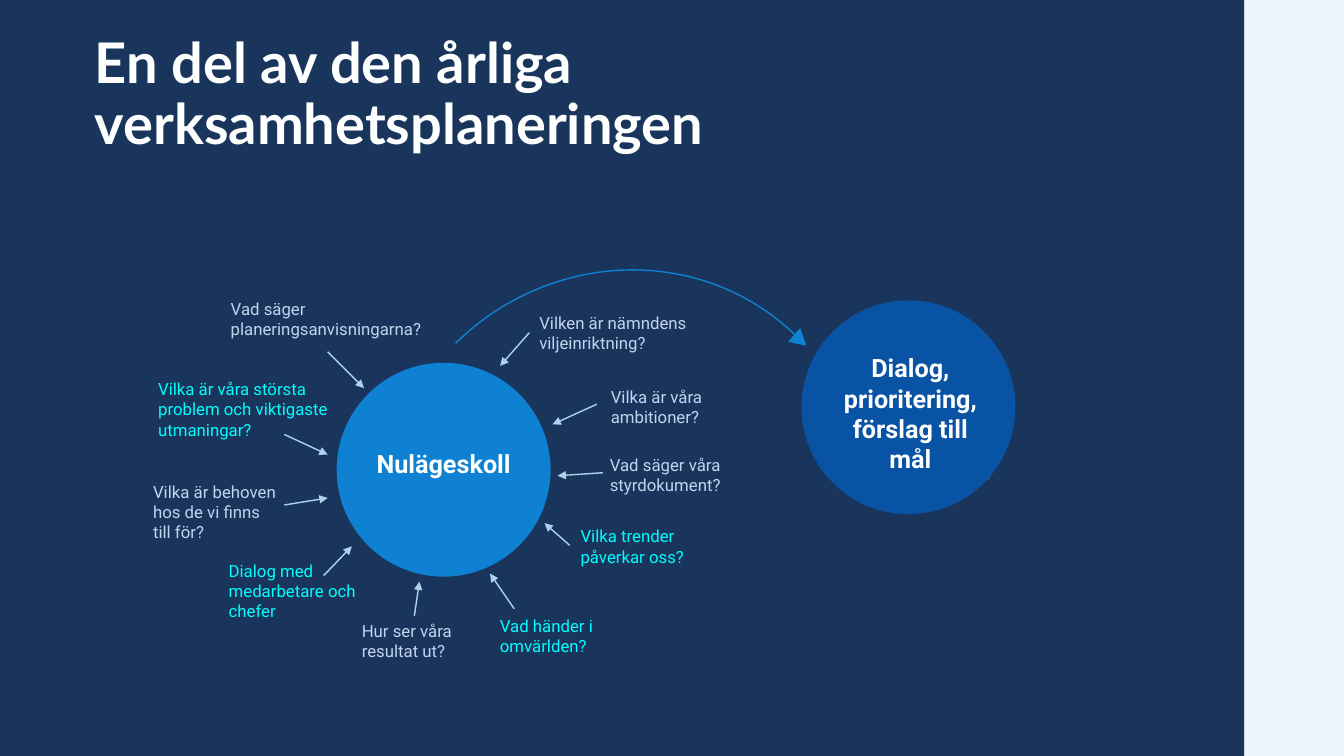
"""Build the slide that places the current-state check in yearly planning."""
from dataclasses import dataclass
from typing import Optional

from lxml import etree
from pptx import Presentation
from pptx.dml.color import RGBColor
from pptx.enum.shapes import MSO_CONNECTOR as Connector
from pptx.enum.shapes import MSO_SHAPE as Preset
from pptx.enum.text import MSO_ANCHOR as Anchor
from pptx.enum.text import MSO_AUTO_SIZE as AutoSize
from pptx.enum.text import PP_ALIGN as Align
from pptx.oxml.ns import qn
from pptx.util import Emu, Pt

EMU_PER_PX = 9144


@dataclass(frozen=True)
class Theme:
    edge: str = "EEF5FB"
    panel: str = "1A355C"
    white: str = "FEFFFF"
    pale: str = "C2D4EE"
    cyan: str = "00FEFE"
    arrow: str = "AED1EC"
    check: str = "0F81D3"
    dialog: str = "0953A5"
    title_font: str = "Lato"
    body_font: str = "Roboto"
    title_size: int = 40
    hub_size: int = 18
    question_size: int = 12


THEME = Theme()


@dataclass(frozen=True)
class Box:
    left: int
    top: int
    width: int
    height: int

    def emu(self) -> tuple:
        return tuple(px(side) for side in (self.left, self.top, self.width, self.height))


@dataclass(frozen=True)
class Question:
    text: str
    box: Box
    start: tuple
    end: tuple
    color: str = THEME.pale


@dataclass(frozen=True)
class Hub:
    text: str
    circle: Box
    label: Box
    color: str
    label_filled: bool = False


PAGE = Box(0, 0, 1333, 750)
PANEL = Box(0, 0, 1234, 750)
TITLE = Box(94, 34, 1047, 121)
ARC = Box(371, 273, 492, 471)
ARC_HEAD = Box(785, 330, 17, 15)

HUBS = [
    Hub("Dialog, prioritering, förslag till mål", Box(797, 300, 208, 208),
        Box(825, 345, 156, 131), THEME.dialog, True),
    Hub("Nulägeskoll", Box(336, 362, 208, 208), Box(190, 440, 500, 40), THEME.check),
]

QUESTIONS = [
    Question("Vad säger planeringsanvisningarna?", Box(219, 291, 233, 50),
             (325, 349), (361, 385)),
    Question("Vilka är våra största problem och viktigaste utmaningar?",
             Box(147, 371, 206, 71), (282, 431), (325, 451), THEME.cyan),
    Question("Vilka är behoven hos de vi finns till för?", Box(142, 473, 146, 71),
             (282, 501), (325, 494)),
    Question("Dialog med medarbetare och chefer", Box(217, 551, 146, 73),
             (321, 571), (349, 542), THEME.cyan),
    Question("Hur ser våra resultat ut?", Box(349, 611, 124, 50),
             (411, 611), (416, 577)),
    Question("Vad händer i omvärlden?", Box(486, 606, 194, 50),
             (510, 604), (486, 569), THEME.cyan),
    Question("Vilka trender påverkar oss?", Box(566, 517, 173, 50),
             (565, 541), (540, 519), THEME.cyan),
    Question("Vad säger våra styrdokument?", Box(595, 446, 230, 50),
             (598, 469), (553, 472)),
    Question("Vilka är våra \vambitioner?", Box(596, 379, 500, 50),
             (592, 401), (548, 421)),
    Question("Vilken är nämndens viljeinriktning?", Box(525, 305, 228, 50),
             (525, 330), (496, 363)),
]


def px(length: int) -> Emu:
    return Emu(length * EMU_PER_PX)


def rgb(color: str) -> RGBColor:
    return RGBColor.from_string(color)


def set_fill(shape, color: str) -> None:
    shape.fill.solid()
    shape.fill.fore_color.rgb = rgb(color)


def set_line(shape, color: str, width: float) -> None:
    shape.line.color.rgb = rgb(color)
    shape.line.width = Pt(width)


def set_font(para, name: str, size: int, color: str, bold: bool = False) -> None:
    para.font.name = name
    para.font.size = Pt(size)
    para.font.bold = bold
    para.font.color.rgb = rgb(color)


def add_preset(shapes, preset: Preset, box: Box, fill: Optional[str] = None,
               line: Optional[str] = None, width: float = 1):
    shape = shapes.add_shape(preset, *box.emu())
    shape.shadow.inherit = False
    if fill:
        set_fill(shape, fill)
    else:
        shape.fill.background()
    if line:
        set_line(shape, line, width)
    else:
        shape.line.fill.background()
    return shape


def add_text(shapes, text: str, box: Box, size: int, color: str, bold: bool = False,
             align: Align = Align.LEFT):
    shape = shapes.add_textbox(*box.emu())
    frame = shape.text_frame
    frame.word_wrap = True
    para = frame.paragraphs[0]
    para.text = text
    para.alignment = align
    set_font(para, THEME.body_font, size, color, bold)
    return shape


def add_title(page) -> None:
    title = page.shapes.title
    title.left, title.top, title.width, title.height = TITLE.emu()
    frame = title.text_frame
    frame.text = "En del av den årliga verksamhetsplaneringen"
    frame.word_wrap = True
    frame.auto_size = AutoSize.NONE
    frame.vertical_anchor = Anchor.BOTTOM
    frame.margin_left = frame.margin_right = frame.margin_top = frame.margin_bottom = 0
    para = frame.paragraphs[0]
    para.alignment = Align.LEFT
    para.line_spacing = 0.9
    set_font(para, THEME.title_font, THEME.title_size, THEME.white, True)


def add_hub(page, hub: Hub) -> None:
    group = page.shapes.add_group_shape()
    add_preset(group.shapes, Preset.OVAL, hub.circle, hub.color, hub.color, 3)
    label = add_text(group.shapes, hub.text, hub.label, THEME.hub_size, THEME.white,
                     True, Align.CENTER)
    if hub.label_filled:
        set_fill(label, hub.color)
        set_line(label, hub.color, 0.75)


def add_question(page, question: Question) -> None:
    add_text(page.shapes, question.text, question.box, THEME.question_size, question.color)
    ends = [px(value) for value in question.start + question.end]
    arrow = page.shapes.add_connector(Connector.STRAIGHT, *ends)
    set_line(arrow, THEME.arrow, 1)
    etree.SubElement(arrow.line._get_or_add_ln(), qn("a:tailEnd"), type="triangle")
    etree.SubElement(arrow.element.spPr, qn("a:effectLst"))


def add_curved_arrow(page) -> None:
    arc = add_preset(page.shapes, Preset.ARC, ARC, line=THEME.check)
    arc.rotation = 315.5
    head = add_preset(page.shapes, Preset.ISOSCELES_TRIANGLE, ARC_HEAD, THEME.check,
                      THEME.check, 0.5)
    head.rotation = 311.5
    head.element.spPr.xfrm.set("flipV", "1")


def main() -> None:
    deck = Presentation()
    deck.slide_width, deck.slide_height = px(PAGE.width), px(PAGE.height)
    page = deck.slides.add_slide(deck.slide_layouts.get_by_name("Title Only"))
    set_fill(page.background, THEME.edge)
    panel = add_preset(page.shapes, Preset.RECTANGLE, PANEL, THEME.panel)
    page.shapes.title.element.addprevious(panel.element)
    add_title(page)
    for hub in HUBS:
        add_hub(page, hub)
    for question in QUESTIONS:
        add_question(page, question)
    add_curved_arrow(page)
    deck.save("out.pptx")


if __name__ == "__main__":
    main()
